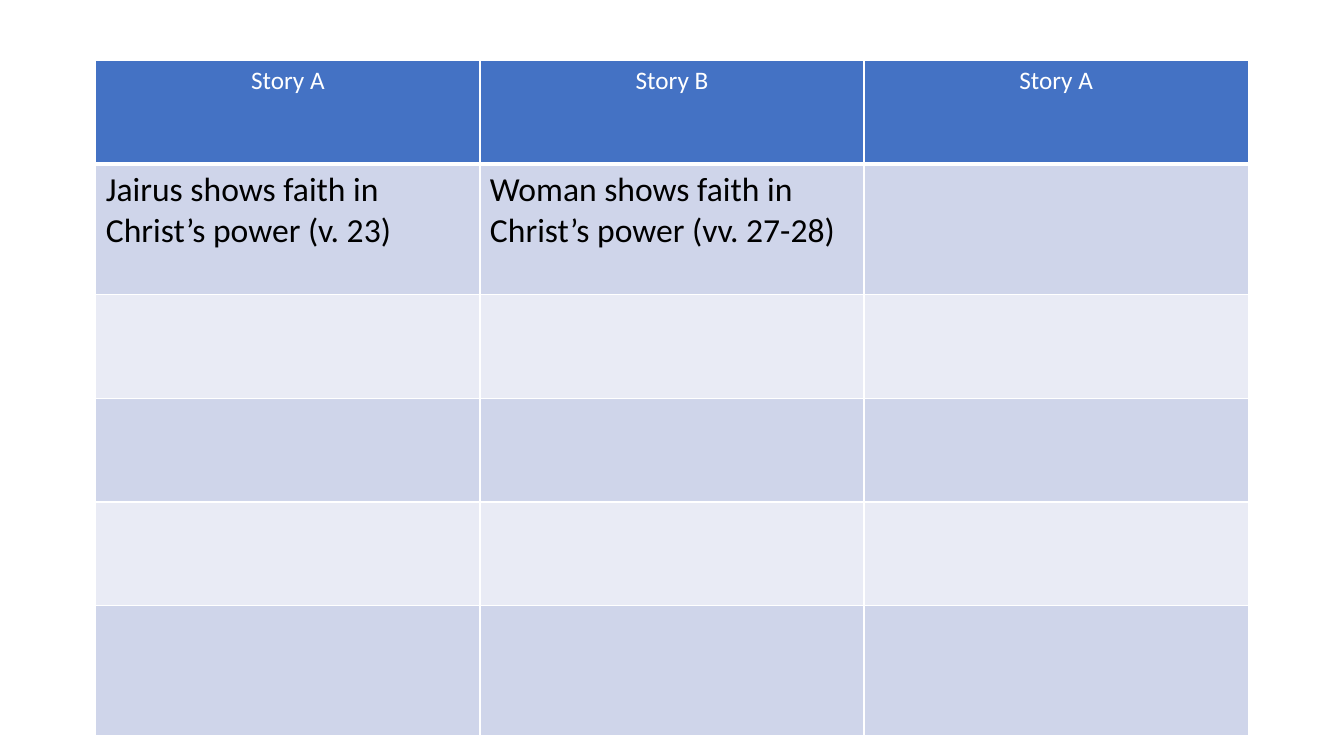
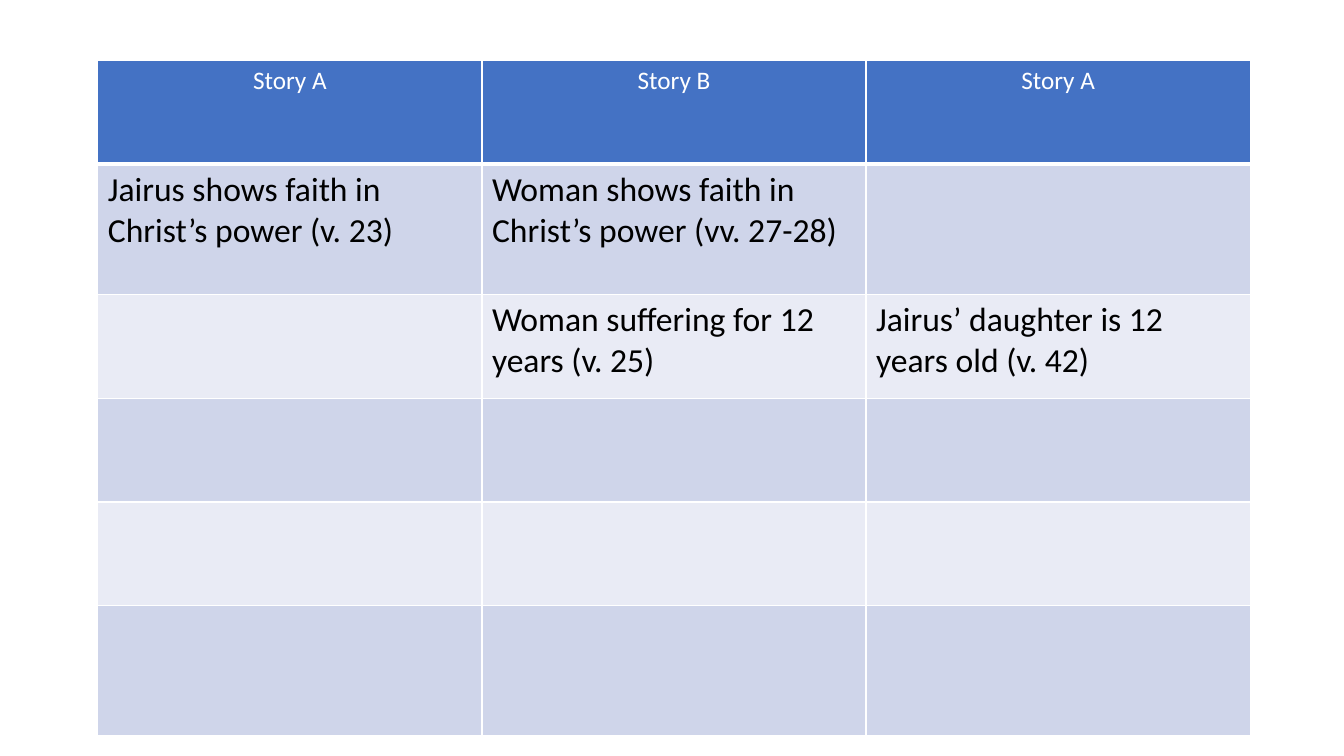
import pptx
import pptx.util
import pptx.dml.color
import pptx.enum.text
import lxml.etree
import pptx.oxml.ns

Inches = pptx.util.Inches
Pt = pptx.util.Pt
ALIGN = pptx.enum.text.PP_ALIGN
RGB = pptx.dml.color.RGBColor.from_string

COLORS = {"head": "4472C4", "dark": "CFD5EA", "light": "E9EBF5",
          "white": "FFFFFF", "black": "000000"}
HEAD = {"size": Pt(18), "name": "Calibri", "bold": False}
BODY = {"size": Pt(24), "name": "Calibri", "bold": False}
WIDTH = 3.81
HEIGHTS = [1.03, 1.29, 1.03, 1.03, 1.03, 1.29]
TITLES = ["Story A", "Story B", "Story A"]
FAITH = ["Jairus shows faith in Christ’s power (v. 23)",
         "Woman shows faith in Christ’s power (vv. 27-28)", ""]
YEARS = ["", "Woman suffering for 12 years (v. 25)",
         "Jairus’ daughter is 12 years old (v. 42)"]
SLIDES = [(0.95, [TITLES, FAITH]),
          (0.97, [TITLES, FAITH, YEARS])]


def add_borders(cell, widths):
    """Draw white cell edges; widths maps L, R, T, B to points."""
    props = cell._tc.get_or_add_tcPr()
    for side, width in widths.items():
        line = lxml.etree.SubElement(props, pptx.oxml.ns.qn("a:ln" + side),
                                     w=str(Pt(width)))
        fill = lxml.etree.SubElement(line, pptx.oxml.ns.qn("a:solidFill"))
        lxml.etree.SubElement(fill, pptx.oxml.ns.qn("a:srgbClr"),
                              val=COLORS["white"])


def write_cell(cell, text, style, color, align):
    para = cell.text_frame.paragraphs[0]
    para.alignment = align
    run = para.add_run()
    run.text = text
    for key, value in style.items():
        setattr(run.font, key, value)
    run.font.color.rgb = RGB(COLORS[color])


deck = pptx.Presentation()
deck.slide_width = Inches(13.33)
deck.slide_height = Inches(7.5)

for left, texts in SLIDES:
    slide = deck.slides.add_slide(deck.slide_layouts[6])
    table = slide.shapes.add_table(
        len(HEIGHTS), len(TITLES), Inches(left), Inches(0.6),
        Inches(WIDTH * len(TITLES)), Inches(sum(HEIGHTS))).table
    for col in table.columns:
        col.width = Inches(WIDTH)
    for r, height in enumerate(HEIGHTS):
        table.rows[r].height = Inches(height)
        band = "head" if r == 0 else "dark" if r % 2 else "light"
        edges = {"L": 1, "R": 1, "T": 3 if r == 1 else 1, "B": 3 if r == 0 else 1}
        for c in range(len(TITLES)):
            cell = table.cell(r, c)
            add_borders(cell, edges)
            cell.fill.solid()
            cell.fill.fore_color.rgb = RGB(COLORS[band])
            text = texts[r][c] if r < len(texts) else ""
            if text and r == 0:
                write_cell(cell, text, HEAD, "white", ALIGN.CENTER)
            elif text:
                write_cell(cell, text, BODY, "black", ALIGN.LEFT)

deck.save("out.pptx")
